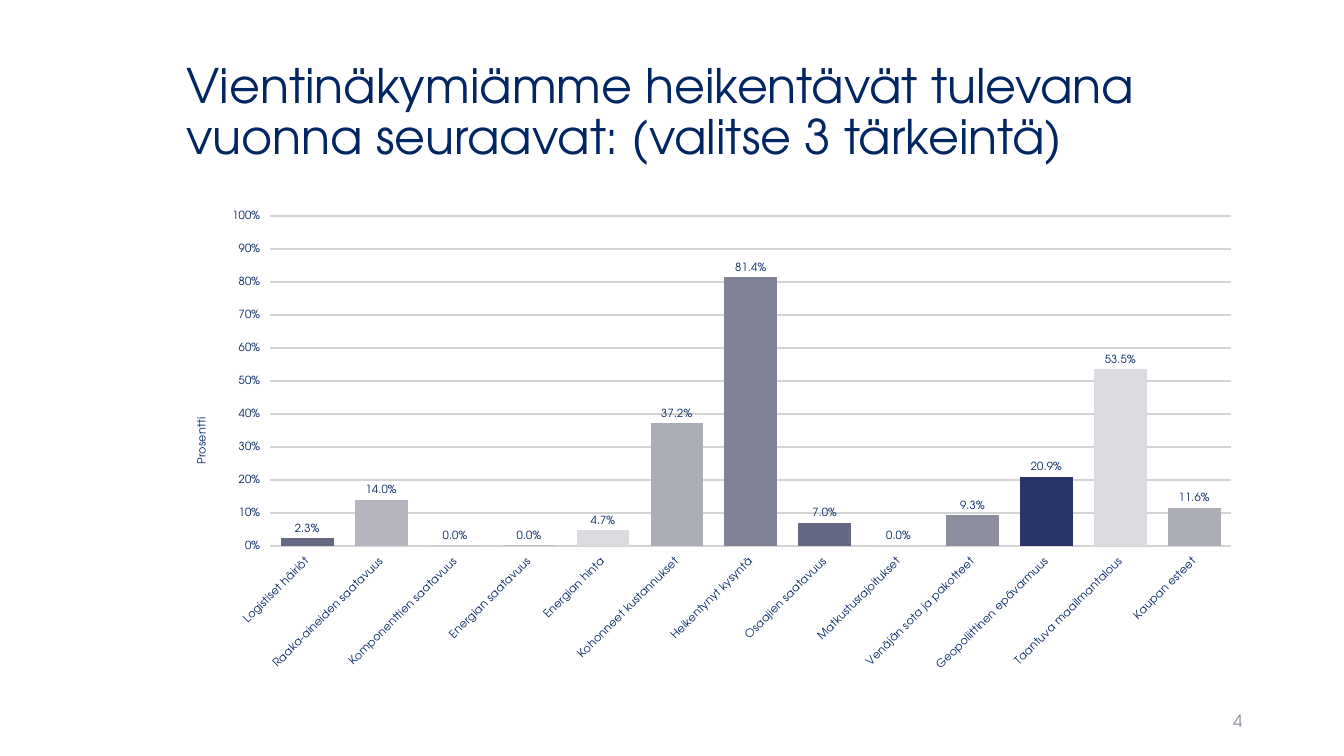
from pptx import Presentation
from pptx.chart.data import CategoryChartData
from pptx.dml.color import RGBColor
from pptx.enum.chart import XL_CHART_TYPE as ChartType, XL_LABEL_POSITION as LabelPos
from pptx.enum.chart import XL_TICK_MARK as Tick
from pptx.enum.text import MSO_ANCHOR as Anchor, PP_ALIGN as Align
from pptx.oxml import parse_xml
from pptx.oxml.ns import nsdecls
from pptx.util import Inches, Pt

THEME = {
    "font": "TeX Gyre Adventor",
    "navy": "002663", "grey": "8C8E9F", "grid": "D3D3D3",
    "bars": ["646883", "B4B5BF", "8C8E9F", "293568", "DADBDF", "ABADB7", "7F8195"],
    "title": 34, "number": 12, "chart": 8,
}
LEFT, WIDTH = 1.75, 10.59

answers = {
    "Logistiset häiriöt": 0.023,
    "Raaka-aineiden saatavuus": 0.14,
    "Komponenttien saatavuus": 0,
    "Energian saatavuus": 0,
    "Energian hinta": 0.047,
    "Kohonneet kustannukset": 0.372,
    "Heikentynyt kysyntä": 0.814,
    "Osaajien saatavuus": 0.07,
    "Matkustusrajoitukset": 0,
    "Venäjän sota ja pakotteet": 0.093,
    "Geopoliittinen epävarmuus": 0.209,
    "Taantuva maailmantalous": 0.535,
    "Kaupan esteet": 0.116,
}


def style(font, size, color):
    font.name = THEME["font"]
    font.size = Pt(THEME[size])
    font.bold = False
    font.color.rgb = RGBColor.from_string(THEME[color])


def add_text(s, box, text, size, color, align):
    tf = s.shapes.add_textbox(*map(Inches, box)).text_frame
    tf.word_wrap = True
    tf.vertical_anchor = Anchor.MIDDLE
    p = tf.paragraphs[0]
    p.text = text
    p.alignment = align
    style(p.font, size, color)
    return p


prs = Presentation()
prs.slide_width, prs.slide_height = Inches(13.33), Inches(7.5)
s = prs.slides.add_slide(prs.slide_layouts[6])

p = add_text(s, (LEFT, 0.4, WIDTH, 1.45),
             "Vientinäkymiämme heikentävät tulevana vuonna seuraavat: (valitse 3 tärkeintä)",
             "title", "navy", Align.LEFT)
p.line_spacing = 0.9

p = add_text(s, (9.42, 6.95, 3, 0.4), "4", "number", "grey", Align.RIGHT)
p.space_after = Pt(6)

data = CategoryChartData(number_format="0.0%")
data.categories = list(answers)
data.add_series("Series 1", list(answers.values()))
box = map(Inches, (LEFT, 2, WIDTH, 4.76))
chart = s.shapes.add_chart(ChartType.COLUMN_CLUSTERED, *box, data).chart
chart.has_legend = False
chart.has_title = False
style(chart.font, "chart", "navy")

cat_axis, val_axis = chart.category_axis, chart.value_axis
for axis in (cat_axis, val_axis):
    style(axis.tick_labels.font, "chart", "navy")
    axis.major_tick_mark = Tick.OUTSIDE
    axis.format.line.fill.background()

val_axis.minimum_scale, val_axis.maximum_scale = 0, 1
val_axis.major_unit = 0.1
val_axis.tick_labels.number_format = "0%"
val_axis.tick_labels.number_format_is_linked = False
grid = val_axis.major_gridlines.format.line
grid.width = Pt(1)
grid.color.rgb = RGBColor.from_string(THEME["grid"])
p = val_axis.axis_title.text_frame.paragraphs[0]
p.text = "Prosentti"
style(p.font, "chart", "navy")

plot = chart.plots[0]
plot.gap_width, plot.overlap = 40, -2
plot.vary_by_categories = False
plot.has_data_labels = True
labels = plot.data_labels
labels.show_value = True
labels.number_format = "0.0%"
labels.number_format_is_linked = False
labels.position = LabelPos.OUTSIDE_END
style(labels.font, "chart", "navy")

bars = plot.series[0]
for i in range(len(answers)):
    fill = bars.points[i].format.fill
    fill.solid()
    fill.fore_color.rgb = RGBColor.from_string(THEME["bars"][i % len(THEME["bars"])])
    if i >= 7:
        fill.fore_color.rgb = RGBColor.from_string(THEME["bars"][i - 7])

chart.element.xpath("//c:catAx/c:txPr/a:bodyPr")[0].set("rot", "-2700000")
area = chart.element.xpath("//c:plotArea")[0]
for old in area.xpath("c:layout"):
    area.remove(old)
area.insert(0, parse_xml(
    f'<c:layout {nsdecls("c")}><c:manualLayout><c:layoutTarget val="inner"/>'
    '<c:xMode val="edge"/><c:yMode val="edge"/>'
    '<c:x val="0.088"/><c:y val="0.03"/><c:w val="0.9"/><c:h val="0.688"/>'
    '</c:manualLayout></c:layout>'))

prs.save("out.pptx")
